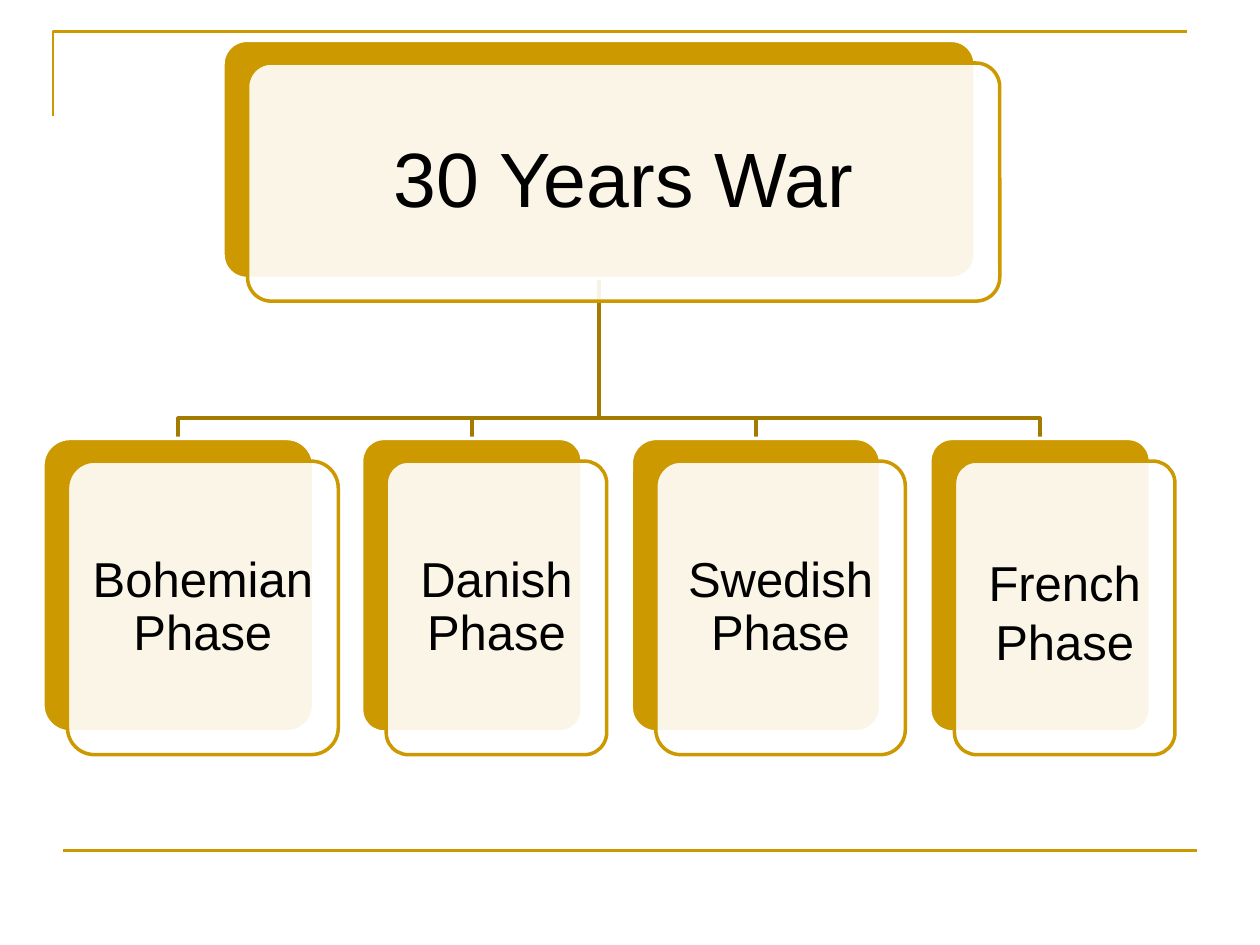
"""Build a hierarchy slide showing the four phases of the 30 Years War."""
from lxml.etree import SubElement
from pptx import Presentation
from pptx.dml.color import RGBColor
from pptx.enum.shapes import MSO_CONNECTOR, MSO_SHAPE
from pptx.enum.text import MSO_ANCHOR, MSO_AUTO_SIZE, PP_ALIGN
from pptx.oxml.ns import qn
from pptx.util import Inches, Pt

COLORS = {"gold": "CC9900", "branch": "A37B00", "white": "FFFFFF", "text": "000000"}
ROOT = {"text": "30 Years War", "left": 17.7, "top": 3.2, "width": 59.7, "height": 18.9}
PHASE_TOP, PHASE_HEIGHT = 34.8, 23.3
PHASES = [
    {"text": "Bohemian Phase", "left": 3.4, "width": 21.5},
    {"text": "Danish Phase", "left": 28.7, "width": 17.5},
    {"text": "Swedish Phase", "left": 50.1, "width": 19.8},
    {"text": "French Phase", "left": 73.8, "width": 17.5, "spacing": 1.0, "drop": 0.25},
]
FRAME = [(4.2, 9.2), (4.2, 2.5), (94.2, 2.5)]
FOOT_LINE = [(5, 67.5), (95, 67.5)]
COLUMNS, ROWS = 100, 75
OFFSET_X, OFFSET_Y, PADDING = 1.95, 1.8, 0.6
BRANCH_ROW = 33.2

presentation = Presentation()
presentation.slide_width, presentation.slide_height = Inches(10), Inches(7.5)
slide = presentation.slides.add_slide(presentation.slide_layouts[5])
shapes = slide.shapes


def place(column, row):
    return (round(presentation.slide_width * column / COLUMNS),
            round(presentation.slide_height * row / ROWS))


def color(name):
    return RGBColor.from_string(COLORS[name])


def style_line(shape, name, width):
    shape.line.color.rgb = color(name)
    shape.line.width = Pt(width)


def add_path(points, name, width):
    start, *rest = [place(*point) for point in points]
    builder = shapes.build_freeform(*start)
    builder.add_line_segments(rest, close=False)
    shape = builder.convert_to_shape()
    shape.shadow.inherit = False
    shape.fill.background()
    style_line(shape, name, width)


def add_panel(left, top, width, height, fill, line, alpha=None):
    shape = shapes.add_shape(MSO_SHAPE.ROUNDED_RECTANGLE, *place(left, top), *place(width, height))
    shape.adjustments[0] = 0.1
    shape.shadow.inherit = False
    shape.fill.solid()
    shape.fill.fore_color.rgb = color(fill)
    style_line(shape, line, 2)
    if alpha:
        fill_color = shape._element.spPr.find(qn("a:solidFill"))[0]
        SubElement(fill_color, qn("a:alpha"), val=str(alpha * 1000))


def write(shape, text, size=28, spacing=0.9, inset=0.12):
    frame = shape.text_frame
    frame.word_wrap = True
    frame.auto_size = MSO_AUTO_SIZE.NONE
    frame.vertical_anchor = MSO_ANCHOR.MIDDLE
    frame.margin_left = frame.margin_right = Inches(inset)
    frame.margin_top = frame.margin_bottom = Inches(inset)
    frame.text = text
    paragraph = frame.paragraphs[0]
    paragraph.alignment = PP_ALIGN.CENTER
    paragraph.line_spacing = spacing
    paragraph.font.size = Pt(size)
    paragraph.font.name = "Arial"
    paragraph.font.color.rgb = color("text")


def add_card(left, top, width, height, text, title=None, drop=0, **text_format):
    add_panel(left, top, width, height, "gold", "white")
    left, top = left + OFFSET_X, top + OFFSET_Y
    add_panel(left, top, width, height, "white", "gold", alpha=90)
    label = title or shapes.add_textbox(0, 0, 0, 0)
    label.left, label.top = place(left + PADDING, top + PADDING + drop)
    label.width, label.height = place(width - 2 * PADDING, height - 2 * PADDING)
    shapes._spTree.append(label._element)
    write(label, text, **text_format)


add_path(FRAME, "gold", 1.5)
foot_line = shapes.add_connector(
    MSO_CONNECTOR.STRAIGHT, *place(*FOOT_LINE[0]), *place(*FOOT_LINE[1]))
style_line(foot_line, "gold", 1.5)
SubElement(foot_line._element.spPr, qn("a:effectLst"))

root_center = ROOT["left"] + ROOT["width"] / 2
root_bottom = ROOT["top"] + ROOT["height"]
for phase in reversed(PHASES):
    center = phase["left"] + phase["width"] / 2
    add_path([(root_center, root_bottom), (root_center, BRANCH_ROW),
              (center, BRANCH_ROW), (center, PHASE_TOP)], "branch", 2)

add_card(**ROOT, title=shapes.title, size=44, inset=0.18)
for phase in PHASES:
    add_card(top=PHASE_TOP, height=PHASE_HEIGHT, **phase)

presentation.save("out.pptx")
